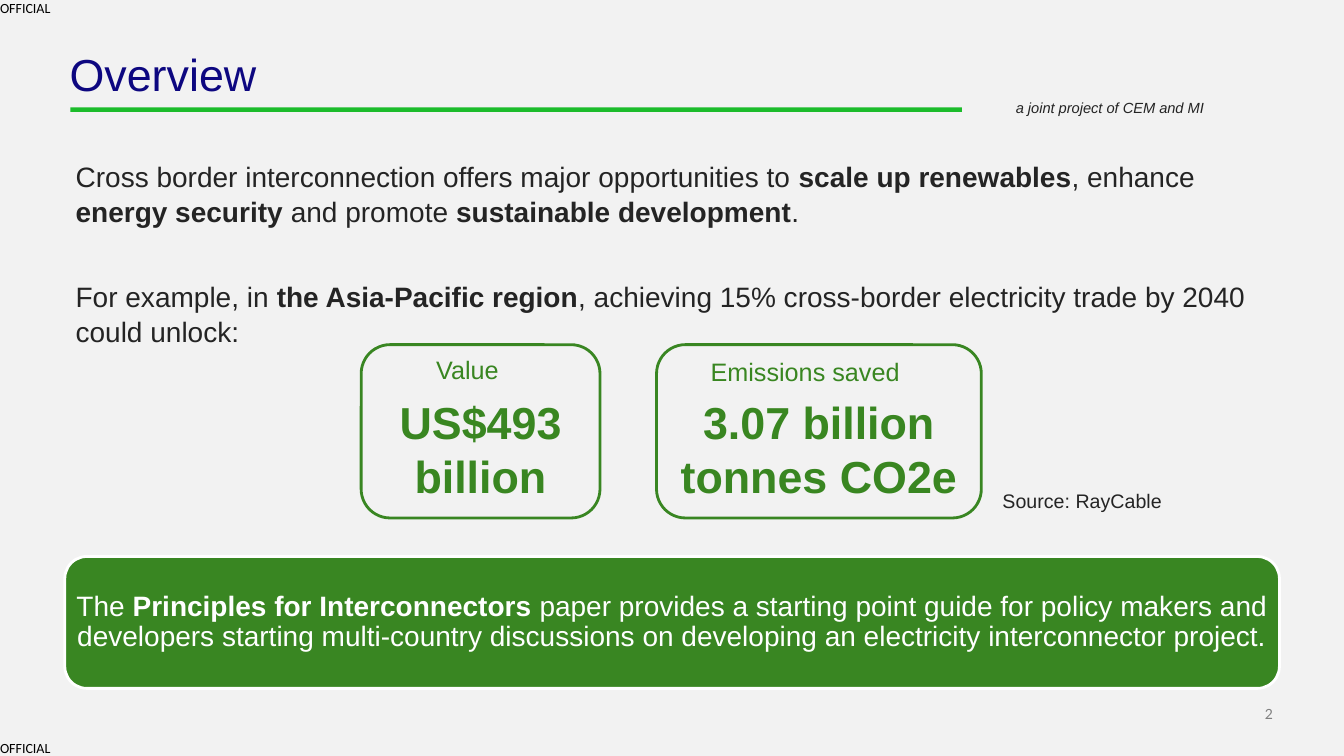
from pptx import Presentation
from pptx.dml.color import RGBColor
from pptx.enum.shapes import MSO_SHAPE
from pptx.enum.text import MSO_ANCHOR, PP_ALIGN
from pptx.util import Pt

BACKGROUND = RGBColor(0xF2, 0xF2, 0xF2)
GREEN = RGBColor(0x39, 0x86, 0x22)
FIGURE_GREEN = RGBColor(0x39, 0x86, 0x21)
RULE_GREEN = RGBColor(0x1C, 0xBC, 0x2B)
NAVY = RGBColor(0x0D, 0x07, 0x80)
DARK = RGBColor(0x24, 0x24, 0x24)
GREY = RGBColor(0x7F, 0x7F, 0x7F)
BLACK = RGBColor(0, 0, 0)
WHITE = RGBColor(0xFF, 0xFF, 0xFF)

presentation = Presentation()
presentation.slide_width = Pt(960)
presentation.slide_height = Pt(540)
slide = presentation.slides.add_slide(presentation.slide_layouts[6])
slide.background.fill.solid()
slide.background.fill.fore_color.rgb = BACKGROUND


def add_text(text, left, top, width, height, size, color=DARK, font="Arial",
             bold=False, italic=False, align=PP_ALIGN.LEFT, anchor=MSO_ANCHOR.TOP,
             margins=(7.2, 3.6), line_spacing=None, space_after=0):
    """Add a text box; a newline starts a paragraph and ** switches bold."""
    box = slide.shapes.add_textbox(Pt(left), Pt(top), Pt(width), Pt(height))
    frame = box.text_frame
    frame.word_wrap = True
    frame.vertical_anchor = anchor
    frame.margin_left = frame.margin_right = Pt(margins[0])
    frame.margin_top = frame.margin_bottom = Pt(margins[1])
    for index, line in enumerate(text.split("\n")):
        paragraph = frame.add_paragraph() if index else frame.paragraphs[0]
        paragraph.alignment = align
        paragraph.line_spacing = line_spacing
        paragraph.space_after = Pt(space_after)
        for part, words in enumerate(line.split("**")):
            run = paragraph.add_run()
            run.text = words
            run.font.name = font
            run.font.size = Pt(size)
            run.font.color.rgb = color
            run.font.bold = bold or part % 2 == 1
            run.font.italic = italic


def add_box(preset, left, top, width, height, fill=None, line=None):
    shape = slide.shapes.add_shape(preset, Pt(left), Pt(top), Pt(width), Pt(height))
    shape.shadow.inherit = False
    if fill is None:
        shape.fill.background()
    else:
        shape.fill.solid()
        shape.fill.fore_color.rgb = fill
    if line is None:
        shape.line.fill.background()
    else:
        shape.line.color.rgb = line
        shape.line.width = Pt(2)


# Header and footer
for marking_top in (0, 528):
    add_text("OFFICIAL", 0, marking_top, 38, 12, 10, color=BLACK, font="Calibri",
             margins=(0, 0))
add_text("2", 879, 504, 30.3, 12.2, 10, color=GREY, font="Lato", align=PP_ALIGN.RIGHT,
         anchor=MSO_ANCHOR.BOTTOM, margins=(0, 0))
add_box(MSO_SHAPE.RECTANGLE, 50.2, 76.7, 636.8, 3.2, fill=RULE_GREEN)
add_text("a joint project of CEM and MI", 718.5, 67, 175, 20, 10.5, italic=True)
add_text("Overview", 49.7, 37.4, 638, 34.6, 32, color=NAVY, margins=(0, 0),
         line_spacing=0.9)

# Introduction
add_text("Cross border interconnection offers major opportunities to "
         "**scale up renewables**, enhance **energy security **and promote "
         "**sustainable development**.\n"
         "For example, in **the Asia-Pacific region**, achieving 15% cross-border "
         "electricity trade by 2040 could unlock:",
         54, 113, 860, 144, 20, margins=(0, 0), line_spacing=1.04, space_after=36)

# Key figures: card left and width, label left, top and width
figures = [
    ("Value", "US$493 billion", 258, 170.6, 304.5, 249.8, 107),
    ("Emissions saved", "3.07 billion tonnes CO2e", 469, 232, 500.5, 251.3, 169),
]
for label, figure, left, width, label_left, label_top, label_width in figures:
    add_text(figure, left, 278.6, width, 85, 32, color=FIGURE_GREEN, bold=True,
             align=PP_ALIGN.CENTER)
    add_text(label, label_left, label_top, label_width, 29, 18, color=FIGURE_GREEN)
    add_box(MSO_SHAPE.ROUNDED_RECTANGLE, left, 246.2, width, 123.8, line=GREEN)
add_text("Source: RayCable", 709, 345.6, 169, 24.5, 14)

# Closing banner
add_box(MSO_SHAPE.ROUNDED_RECTANGLE, 46.3, 397.5, 867.6, 94.2, fill=GREEN, line=WHITE)
add_text("The **Principles for Interconnectors **paper provides a starting point guide "
         "for policy makers and developers starting multi-country discussions on "
         "developing an electricity interconnector project.",
         46.3, 401.8, 867.6, 85.6, 20, color=WHITE, align=PP_ALIGN.CENTER,
         anchor=MSO_ANCHOR.MIDDLE, margins=(7.2, 7.2), line_spacing=0.9)

presentation.save("out.pptx")
